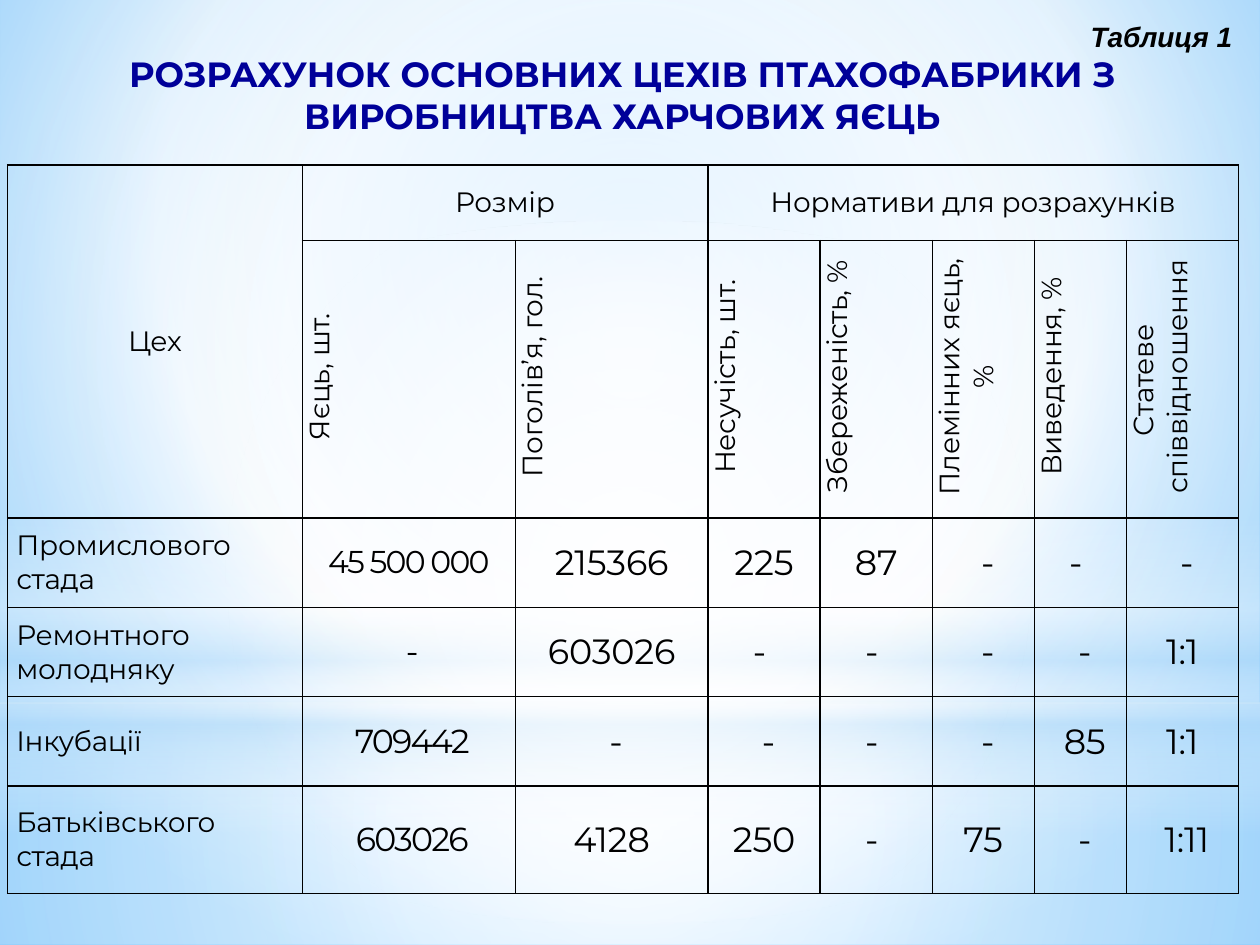
from lxml.etree import SubElement
from pptx import Presentation
from pptx.dml.color import RGBColor
from pptx.enum.shapes import MSO_SHAPE
from pptx.enum.text import MSO_ANCHOR, MSO_AUTO_SIZE, PP_ALIGN
from pptx.oxml.ns import qn
from pptx.util import Inches, Pt

COLUMNS = [2.34, 1.69, 1.53, 0.89, 0.89, 0.81, 0.73, 0.89]
ROWS = [0.6, 2.2, 0.71, 0.71, 0.71, 0.85]
GROUPS = [(0, 2, 1, "Цех"), (1, 1, 2, "Розмір"),
          (3, 1, 5, "Нормативи для розрахунків")]  # column, rows, columns, text
HEADINGS = ["Яєць, шт.", "Поголів’я, гол.", "Несучість, шт.", "Збереженість, %",
            "Племінних яєць, %", "Виведення, %", "Статеве \nспіввідношення"]
WORKSHOPS = [
    ["Промислового стада", "45 500 000", " 215366 ", "225", "87", " -", "- ", " -"],
    ["Ремонтного молодняку", " -", "603026", "- ", "- ", " -", " -", "1:1"],
    ["Інкубації", " 709442", " -", " -", "- ", " -", " 85", "1:1"],
    ["Батьківського стада", " 603026", "4128", "250", "- ", "75", " -", " 1:11"],
]
BACKDROP = [("9ED5FF", 0, 100), ("FFFFFF", 60, 100), ("5BB9FF", 100, 100)]
LOWER = [("FFFFFF", 0, 91), ("FFFFFF", 37, 76), ("B4DCFA", 100, 79)]
UPPER = [("FFFFFF", 0, 89), ("FFFFFF", 48, 62), ("B4DCFA", 100, 79)]
HORIZON = [("FFFFFF", 0, 0), ("FFFFFF", 29, 30), ("B4DCFA", 45, 40),
           ("FFFFFF", 55, 26), ("B4DCFA", 65, 60), ("FFFFFF", 100, 0)]
GLOW = [("FFFFFF", 0, 100), ("FFFFFF", 56, 0)]
CENTRE = (50, 50, 50, 50)


def color(value):
    return RGBColor.from_string(value)


def gradient(parent, stops, focus=None):
    """Replace the solid fill of parent; without a focus the gradient runs downwards."""
    solid = parent.find(qn("a:solidFill"))
    grad = parent.makeelement(qn("a:gradFill"), {"rotWithShape": "1"})
    parent.replace(solid, grad)
    stop_list = SubElement(grad, qn("a:gsLst"))
    for value, position, opacity in stops:
        stop = SubElement(stop_list, qn("a:gs"), pos=str(position * 1000))
        rgb = SubElement(stop, qn("a:srgbClr"), val=value)
        if opacity < 100:
            SubElement(rgb, qn("a:alpha"), val=str(opacity * 1000))
    if focus:
        shade = SubElement(grad, qn("a:path"), path="circle")
        sides = {side: str(n * 1000) for side, n in zip("ltrb", focus)}
        SubElement(shade, qn("a:fillToRect"), sides)
    else:
        SubElement(grad, qn("a:lin"), ang="5400000", scaled="0")


class Deck:
    font, ink, accent = "Montserrat", "000000", "000099"

    def __init__(self):
        self.prs = Presentation()
        self.prs.slide_width, self.prs.slide_height = Inches(10), Inches(7.5)
        self.s = self.prs.slides.add_slide(self.prs.slide_layouts[5])

    def backdrop(self, stops, focus):
        self.s.background.fill.solid()
        gradient(self.s.element.find(".//" + qn("p:bgPr")), stops, focus)

    def panel(self, kind, top, height, stops, focus=None):
        """Add a full-width background shape with a gradient."""
        sp = self.s.shapes.add_shape(kind, 0, Inches(top), Inches(10), Inches(height))
        sp.shadow.inherit = False
        sp.line.fill.background()
        sp.fill.solid()
        gradient(sp.element.spPr, stops, focus)

    def style(self, p, size, align, font=None, ink=None, spacing=0):
        p.alignment = align
        for r in p.runs:
            r.font.size = Pt(size)
            r.font.name = font or self.font
            r.font.color.rgb = color(ink or self.ink)
            if spacing:
                r.font._element.set("spc", str(round(spacing * 100)))

    def title(self, label, text):
        sp = self.s.shapes.title
        self.s.shapes.element.append(sp.element)  # in front of the panels
        sp.left, sp.top, sp.width, sp.height = 0, Inches(0.1), Inches(9.88), Inches(1.04)
        tf = sp.text_frame
        tf.word_wrap = True
        tf.auto_size = MSO_AUTO_SIZE.SHAPE_TO_FIT_TEXT
        tf.vertical_anchor = MSO_ANCHOR.MIDDLE
        tf.text = f"{label}\n{text}"
        number, heading = tf.paragraphs
        self.style(number, 16, PP_ALIGN.RIGHT, font="Arial")
        self.style(heading, 20, PP_ALIGN.CENTER, ink=self.accent)
        for p in tf.paragraphs:
            p.runs[0].font.bold = True
        number.runs[0].font.italic = True

    def cell(self, cell, text, size=16, align=PP_ALIGN.CENTER, spacing=-0.1, upright=False):
        """Fill in a table cell; upright text reads from bottom to top."""
        cell.text = text
        for p in cell.text_frame.paragraphs:
            self.style(p, size, align, spacing=spacing)
            if upright:
                p._p.get_or_add_pPr().set("marL", str(Inches(0.04)))
        if upright:
            cell._tc.get_or_add_tcPr().set("vert", "vert270")

    def frame(self, cell):
        """Give a cell its borders, margins and clear fill."""
        cell.margin_left = cell.margin_right = Inches(0.07)
        cell.margin_top = cell.margin_bottom = 0
        cell.vertical_anchor = MSO_ANCHOR.MIDDLE
        for side in ("lnL", "lnR", "lnT", "lnB"):
            line = SubElement(cell._tc.get_or_add_tcPr(), qn(f"a:{side}"), w=str(Pt(1)))
            fill = SubElement(line, qn("a:solidFill"))
            SubElement(fill, qn("a:srgbClr"), val=self.ink)
        cell.fill.background()

    def table(self, left, top):
        table = self.s.shapes.add_table(
            len(ROWS), len(COLUMNS), Inches(left), Inches(top),
            Inches(sum(COLUMNS)), Inches(sum(ROWS))).table
        table.first_row = table.horz_banding = False
        for column, width in zip(table.columns, COLUMNS):
            column.width = Inches(width)
        for row, height in zip(table.rows, ROWS):
            row.height = Inches(height)
        for cell in table.iter_cells():
            self.frame(cell)
        for c, rows, columns, text in GROUPS:
            table.cell(0, c).merge(table.cell(rows - 1, c + columns - 1))
            self.cell(table.cell(0, c), text)
        for c, text in enumerate(HEADINGS, 1):
            self.cell(table.cell(1, c), text, upright=True)
        for r, (name, eggs, *values) in enumerate(WORKSHOPS, 2):
            self.cell(table.cell(r, 0), name, align=PP_ALIGN.JUSTIFY)
            self.cell(table.cell(r, 1), eggs, 18 if r == 2 else 19, spacing=-1)
            for c, value in enumerate(values, 2):
                self.cell(table.cell(r, c), value, 20)


def main():
    deck = Deck()
    deck.backdrop(BACKDROP, (20, 10, 20, 60))
    deck.panel(MSO_SHAPE.RECTANGLE, 5.58, 1.92, LOWER, CENTRE)
    deck.panel(MSO_SHAPE.RECTANGLE, 0, 5.58, UPPER, CENTRE)
    deck.panel(MSO_SHAPE.RECTANGLE, 4.12, 2.5, HORIZON)
    deck.panel(MSO_SHAPE.OVAL, 1.75, 5.58, GLOW, CENTRE)
    deck.table(0.06, 1.31)
    deck.title("Таблиця 1", "РОЗРАХУНОК ОСНОВНИХ ЦЕХІВ ПТАХОФАБРИКИ З ВИРОБНИЦТВА ХАРЧОВИХ ЯЄЦЬ")
    deck.prs.save("out.pptx")


if __name__ == "__main__":
    main()
